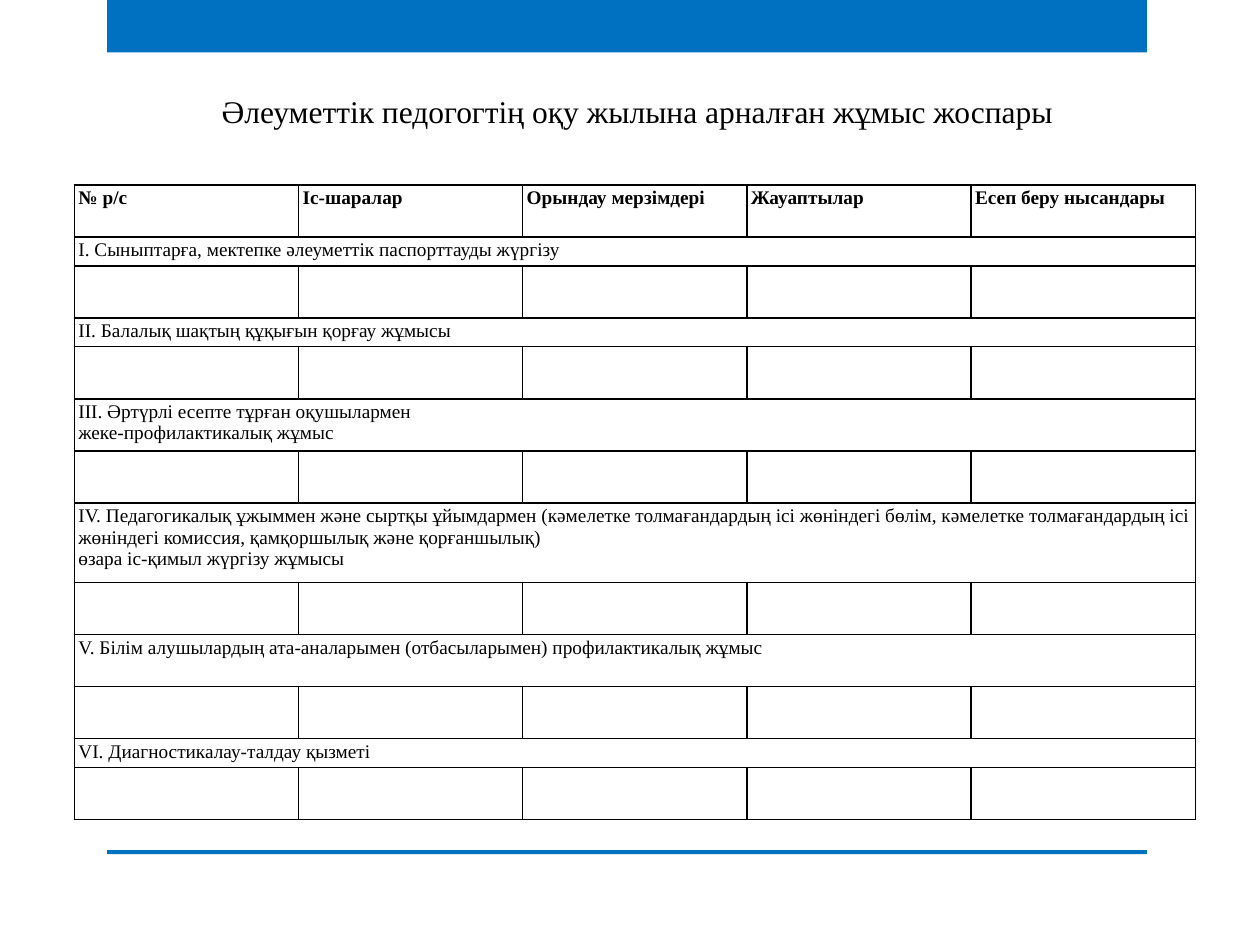
from lxml.etree import SubElement
from pptx import Presentation
from pptx.dml.color import RGBColor
from pptx.enum.shapes import MSO_SHAPE
from pptx.enum.text import MSO_ANCHOR, MSO_AUTO_SIZE, PP_ALIGN
from pptx.oxml.ns import qn
from pptx.util import Cm, Pt

BLUE = RGBColor(0x00, 0x70, 0xC0)
BLACK = RGBColor(0x00, 0x00, 0x00)

HEADERS = ["№ р/с", "Іс-шаралар", "Орындау мерзімдері", "Жауаптылар", "Есеп беру нысандары"]
SECTIONS = [
    (0.58, ["І. Сыныптарға, мектепке әлеуметтік паспорттауды жүргізу"]),
    (0.58, ["II. Балалық шақтың құқығын қорғау жұмысы"]),
    (1.05, ["IІІ. Әртүрлі есепте тұрған оқушылармен", "жеке-профилактикалық жұмыс"]),
    (1.6, [
        "ІV. Педагогикалық ұжыммен және сыртқы ұйымдармен (кәмелетке толмағандардың ісі "
        "жөніндегі бөлім, кәмелетке толмағандардың ісі жөніндегі комиссия, қамқоршылық және "
        "қорғаншылық)",
        "өзара іс-қимыл жүргізу жұмысы",
    ]),
    (1.05, ["V. Білім алушылардың ата-аналарымен (отбасыларымен) профилактикалық жұмыс"]),
    (0.58, ["VI. Диагностикалау-талдау қызметі"]),
]
ROW_HEIGHT = 1.05
COLUMN_WIDTH = 4.52


class SlideBuilder:
    font_name = "Times New Roman"
    title_size = Pt(18)
    table_size = Pt(11)

    def __init__(self, slide):
        self.slide = slide

    def add_text(self, paragraph, lines, size, bold=False):
        for index, line in enumerate(lines):
            if index:
                paragraph.add_line_break()
            run = paragraph.add_run()
            run.text = line
            run.font.name = self.font_name
            run.font.size = size
            run.font.bold = bold
            run.font.color.rgb = BLACK

    def add_title(self, text, left, top, width, height):
        title = self.slide.shapes.title
        title.left, title.top, title.width, title.height = Cm(left), Cm(top), Cm(width), Cm(height)
        frame = title.text_frame
        frame.word_wrap = True
        frame.auto_size = MSO_AUTO_SIZE.NONE
        frame.vertical_anchor = MSO_ANCHOR.TOP
        frame.margin_left = Cm(0.56)
        frame.margin_right = 0
        paragraph = frame.paragraphs[0]
        paragraph.alignment = PP_ALIGN.LEFT
        self.add_text(paragraph, [text], self.title_size)

    def add_bar(self, left, top, width, height):
        shape = self.slide.shapes.add_shape(
            MSO_SHAPE.RECTANGLE, Cm(left), Cm(top), Cm(width), Cm(height))
        shape.shadow.inherit = False
        shape.fill.solid()
        shape.fill.fore_color.rgb = BLUE
        shape.line.fill.background()

    def add_borders(self, cell):
        properties = cell._tc.get_or_add_tcPr()
        for tag in ("a:lnL", "a:lnR", "a:lnT", "a:lnB"):
            line = SubElement(properties, qn(tag), w=str(Pt(1)))
            fill = SubElement(line, qn("a:solidFill"))
            SubElement(fill, qn("a:srgbClr"), val=str(BLACK))

    def fill_cell(self, cell, lines, bold=False):
        cell.margin_left = cell.margin_right = Cm(0.08)
        cell.margin_top = cell.margin_bottom = Cm(0.05)
        self.add_text(cell.text_frame.paragraphs[0], lines, self.table_size, bold)

    def add_plan_table(self, left, top):
        heights = [ROW_HEIGHT]
        for section_height, _ in SECTIONS:
            heights += [section_height, ROW_HEIGHT]
        column_count = len(HEADERS)
        table = self.slide.shapes.add_table(
            len(heights), column_count, Cm(left), Cm(top),
            Cm(COLUMN_WIDTH * column_count), Cm(sum(heights))).table
        table.first_row = False
        table.horz_banding = False
        for column in table.columns:
            column.width = Cm(COLUMN_WIDTH)
        for row, height in zip(table.rows, heights):
            row.height = Cm(height)
        for cell in table.iter_cells():
            self.add_borders(cell)
            cell.fill.background()
        for index, header in enumerate(HEADERS):
            self.fill_cell(table.cell(0, index), [header], bold=True)
        for index, (_, lines) in enumerate(SECTIONS):
            row = 2 * index + 1
            table.cell(row, 0).merge(table.cell(row, column_count - 1))
            self.fill_cell(table.cell(row, 0), lines)


def main():
    presentation = Presentation()
    presentation.slide_width = Cm(25.4)
    presentation.slide_height = Cm(19.05)
    builder = SlideBuilder(presentation.slides.add_slide(presentation.slide_layouts[5]))
    builder.add_bar(2.16, 0, 20.96, 1.06)
    builder.add_bar(2.16, 17.14, 20.96, 0.08)
    builder.add_title("Әлеуметтік педогогтің оқу жылына арналған жұмыс жоспары", 3.91, 1.73, 17.75, 1.8)
    builder.add_plan_table(1.5, 3.73)
    presentation.save("out.pptx")


if __name__ == "__main__":
    main()
